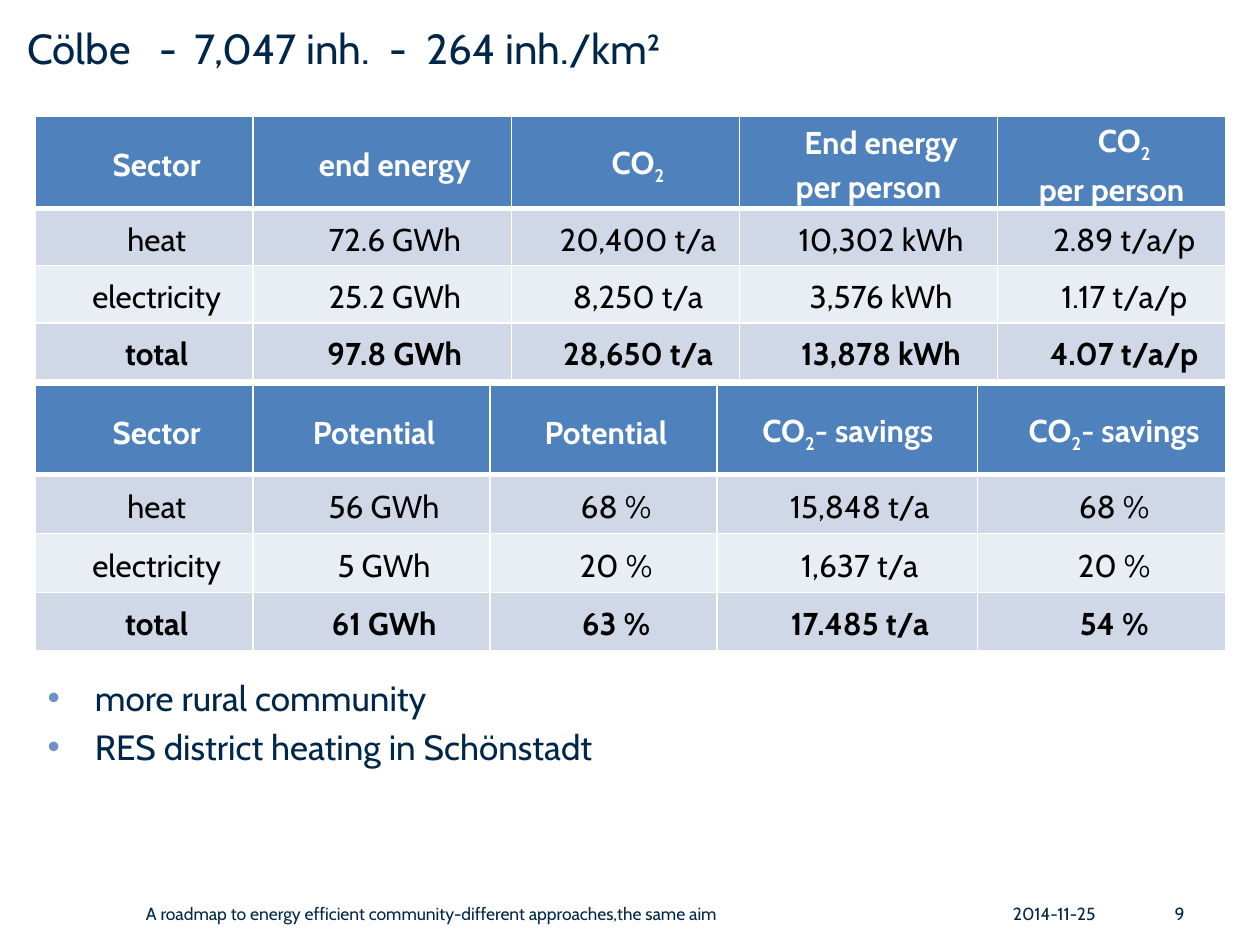
from lxml import etree
from pptx import Presentation
from pptx.dml.color import RGBColor
from pptx.enum.text import MSO_ANCHOR as Anchor, MSO_AUTO_SIZE as Fit, PP_ALIGN as Align
from pptx.oxml.ns import qn
from pptx.util import Pt

FONT = "Cabin"
NAVY, WHITE, BLACK = "002749", "FFFFFF", "000000"
HEAD, BANDS = "4F81BD", ("D0D8E8", "E9EDF4")
BULLET = "6E91CB"
INDENT = 14.4

ENERGY = [
    ["Sector", "end energy", "CO₂", "End energy\nper person", "CO₂\nper person"],
    ["heat", "72.6 GWh", "20,400 t/a", "10,302 kWh", "2.89 t/a/p"],
    ["electricity", "25.2 GWh", "8,250 t/a", "3,576 kWh", "1.17 t/a/p"],
    ["total", "97.8 GWh", "28,650 t/a", "13,878 kWh", "4.07 t/a/p"],
]
SAVINGS = [
    ["Sector", "Potential", "Potential", "CO₂- savings", "CO₂- savings"],
    ["heat", "56 GWh", "68 %", "15,848 t/a", "68 %"],
    ["electricity", "5 GWh", "20 %", "1,637 t/a", "20 %"],
    ["total", "61 GWh", "63 %", "17.485 t/a", "54 %"],
]


def color(code):
    return RGBColor.from_string(code)


def style(para, size, code=NAVY, bold=False):
    font = para.font
    font.name, font.size, font.bold = FONT, Pt(size), bold
    font.color.rgb = color(code)


def place(shape, box):
    shape.left, shape.top, shape.width, shape.height = map(Pt, box)


def sub(parent, tag, **attrs):
    return etree.SubElement(parent, qn(tag), attrs)


def add_title(slide, box, text, stops):
    title = slide.shapes.title
    place(title, box)
    frame = title.text_frame
    frame.auto_size, frame.vertical_anchor = Fit.NONE, Anchor.TOP
    para = frame.paragraphs[0]
    para.text, para.alignment, para.space_before = text, Align.LEFT, Pt(0)
    tabs = sub(para._p.get_or_add_pPr(), "a:tabLst")
    for stop in stops:
        sub(tabs, "a:tab", pos=str(Pt(stop)), algn="l")
    style(para, 24)


def add_list(slide, box, items):
    body = slide.placeholders[1]
    place(body, box)
    frame = body.text_frame
    frame.auto_size = Fit.NONE
    frame.text = "\n".join(items)
    for i, para in enumerate(frame.paragraphs):
        para.space_before = Pt(4 if i else 0)
        props = para._p.get_or_add_pPr()
        props.set("marL", str(Pt(27)))
        props.set("indent", str(Pt(-27)))
        sub(sub(props, "a:buClr"), "a:srgbClr", val=BULLET)
        sub(props, "a:buFont", typeface="Arial")
        sub(props, "a:buChar", char="•")
        style(para, 20)


def add_label(slide, box, text, align=Align.LEFT):
    label = slide.shapes.add_textbox(*map(Pt, box))
    frame = label.text_frame
    frame.word_wrap, frame.vertical_anchor = True, Anchor.MIDDLE
    para = frame.paragraphs[0]
    para.text, para.alignment = text, align
    style(para, 10)


def write(para, text):
    """Fill a paragraph, breaking at newlines and lowering each ₂."""
    for i, line in enumerate(text.split("\n")):
        if i:
            para.add_line_break()
        for j, part in enumerate(line.split("₂")):
            if j:
                low = para.add_run()
                low.text = "2"
                low._r.get_or_add_rPr().set("baseline", "-25000")
            if part:
                para.add_run().text = part


def border(cell, base):
    """Draw white cell edges; base is the width of the lower one."""
    props = cell._tc.get_or_add_tcPr()
    for side, width in zip("LRTB", (1, 1, 1, base)):
        line = sub(props, f"a:ln{side}", w=str(Pt(width)))
        sub(sub(line, "a:solidFill"), "a:srgbClr", val=WHITE)


def fill_cell(cell, text, row, last, indent):
    head = row == 0
    border(cell, 3 if head else 1)
    cell.fill.solid()
    cell.fill.fore_color.rgb = color(HEAD if head else BANDS[(row - 1) % 2])
    cell.margin_left = cell.margin_right = Pt(3.6)
    cell.margin_top = cell.margin_bottom = 0
    cell.vertical_anchor = Anchor.MIDDLE
    para = cell.text_frame.paragraphs[0]
    para.alignment, para.line_spacing = Align.CENTER, 1.15
    para._p.get_or_add_pPr().set("indent", str(Pt(indent)))
    style(para, 18, WHITE if head else BLACK, head or last)
    write(para, text)


def add_grid(slide, box, data, widths, top, step, indents):
    """Add a table with a header row of height top and rows of height step."""
    frame = slide.shapes.add_table(len(data), len(widths), *map(Pt, box))
    table = frame.table
    for col, width in zip(table.columns, widths):
        col.width = Pt(width)
    for r, texts in enumerate(data):
        table.rows[r].height = Pt(step if r else top)
        for c, text in enumerate(texts):
            indent = INDENT if r else indents[c]
            fill_cell(table.cell(r, c), text, r, r == len(data) - 1, indent)


def main():
    deck = Presentation()
    deck.slide_width, deck.slide_height = Pt(720), Pt(540)
    slide = deck.slides.add_slide(deck.slide_layouts[1])
    add_title(slide, (8.6, 9.4, 686, 45.4),
              "Cölbe\t-\t7,047 inh.\t-\t264 inh./km²", (75.4, 95.4, 207, 228))
    add_label(slide, (571.7, 507.6, 66.2, 28.8), "2014-11-25")
    add_label(slide, (76.3, 507.6, 465, 28.8),
              "A roadmap to energy efficient community-different approaches,the same aim")
    add_label(slide, (638, 507.6, 46, 28.8), "9", Align.RIGHT)
    add_grid(slide, (20, 66.2, 680.4, 147.6), ENERGY,
             (124.6, 147.6, 130.3, 147.6, 130.3), 49.7, 32.6, [INDENT] * 5)
    add_list(slide, (20, 383, 680.4, 102.2),
             ["more rural community", "RES district heating in Schönstadt"])
    add_grid(slide, (20, 220.3, 680.4, 152), SAVINGS,
             (124.6, 135.4, 129.6, 149, 141.8), 51, 33.6,
             (INDENT, 2.9, 2.9, 0.7, INDENT))
    deck.save("out.pptx")


if __name__ == "__main__":
    main()
